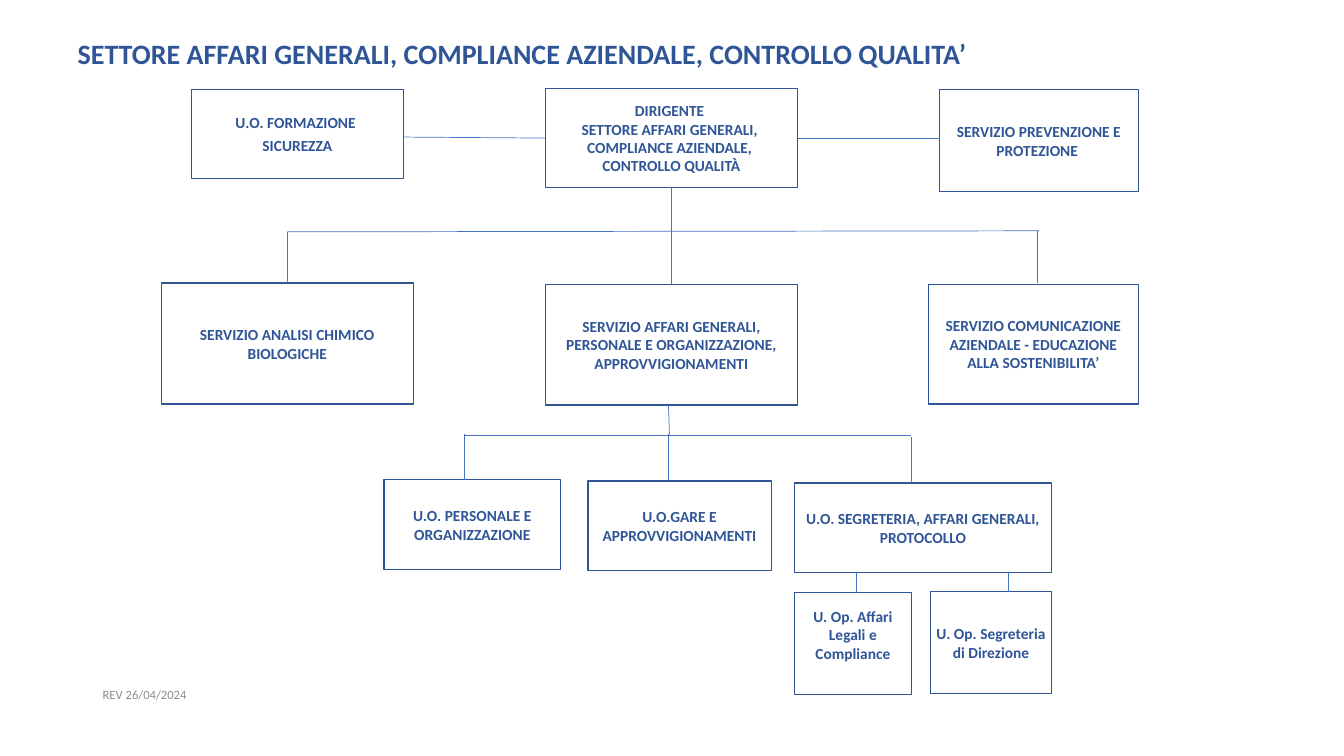
from lxml.etree import SubElement
from pptx import Presentation
from pptx.dml.color import RGBColor
from pptx.enum.shapes import MSO_CONNECTOR as Connector, MSO_SHAPE as Preset
from pptx.enum.text import MSO_ANCHOR as Anchor, PP_ALIGN as Align
from pptx.oxml.ns import qn
from pptx.util import Inches, Pt

COLORS = {"navy": "2F5597", "blue": "4472C4", "gray": "8C8C8C", "white": "FFFFFF"}
TOP, LEFT, BOTTOM = 0, 1, 2
LABEL = {"name": "Calibri", "size": Pt(11), "bold": True}
TITLE = {"name": "Calibri", "size": Pt(20), "bold": True}
REVISION = {"name": "Calibri", "size": Pt(9), "bold": False}
MARGINS = ("margin_left", "margin_top", "margin_right", "margin_bottom")

UNITS = {
    "dirigente": (5.41, 0.88, 2.5, 0.98, [
        "DIRIGENTE \vSETTORE AFFARI GENERALI, \vCOMPLIANCE AZIENDALE, \vCONTROLLO QUALITÀ"]),
    "formazione": (1.9, 0.89, 2.1, 0.88, ["U.O. FORMAZIONE ", "SICUREZZA"]),
    "prevenzione": (9.32, 0.89, 1.97, 1.01, ["SERVIZIO PREVENZIONE E PROTEZIONE "]),
    "analisi": (1.6, 2.81, 2.5, 1.2, ["SERVIZIO ANALISI CHIMICO BIOLOGICHE"]),
    "affari": (5.41, 2.82, 2.5, 1.2, [
        "SERVIZIO AFFARI GENERALI, PERSONALE E ORGANIZZAZIONE, APPROVVIGIONAMENTI"]),
    "comunicazione": (9.21, 2.82, 2.08, 1.19, [
        "SERVIZIO COMUNICAZIONE AZIENDALE - EDUCAZIONE ALLA SOSTENIBILITA’"]),
    "personale": (3.81, 4.76, 1.75, 0.89, ["U.O. PERSONALE E ORGANIZZAZIONE"]),
    "gare": (5.83, 4.77, 1.82, 0.89, ["U.O.GARE E APPROVVIGIONAMENTI"]),
    "segreteria": (7.88, 4.79, 2.55, 0.89, ["U.O. SEGRETERIA, AFFARI GENERALI, PROTOCOLLO"]),
    "legali": (7.88, 5.88, 1.16, 1.01, ["U. Op. Affari Legali e Compliance"]),
    "direzione": (9.23, 5.87, 1.2, 1.01, ["U. Op. Segreteria di Direzione"]),
}

LINKS = [
    (4.01, 1.36, 5.41, 1.37, None, ("dirigente", LEFT)),
    (7.91, 1.37, 9.32, 1.37, None, None),
    (6.66, 1.86, 6.66, 2.82, ("dirigente", BOTTOM), ("affari", TOP)),
    (2.85, 2.3, 10.31, 2.29, None, None),
    (2.85, 2.3, 2.85, 2.81, None, ("analisi", TOP)),
    (10.29, 2.29, 10.29, 2.81, None, None),
    (6.63, 4.02, 6.64, 4.31, None, None),
    (4.61, 4.32, 9.04, 4.32, None, None),
    (4.61, 4.31, 4.61, 4.76, None, None),
    (6.63, 4.31, 6.63, 4.76, None, None),
    (9.04, 4.34, 9.04, 4.79, None, None),
    (8.49, 5.67, 8.49, 5.88, None, None),
    (10, 5.67, 10, 5.87, None, None),
]


def rgb(name):
    return RGBColor.from_string(COLORS[name])


def write(frame, paragraphs, font, color, margins, align=Align.LEFT, after=0):
    frame.word_wrap = True
    frame.vertical_anchor = Anchor.MIDDLE
    for side, margin in zip(MARGINS, margins):
        setattr(frame, side, Inches(margin))
    frame.text = "\n".join(paragraphs)
    for para in frame.paragraphs:
        para.alignment = align
        para.space_after = Pt(after)
        for span in para.runs:
            for key, value in font.items():
                setattr(span.font, key, value)
            span.font.color.rgb = rgb(color)


def add_text(page, left, top, width, height, text, font, color, margins):
    box = page.shapes.add_textbox(*map(Inches, (left, top, width, height)))
    write(box.text_frame, [text], font, color, margins)


def add_unit(page, left, top, width, height, paragraphs):
    box = page.shapes.add_shape(Preset.RECTANGLE, *map(Inches, (left, top, width, height)))
    box.shadow.inherit = False
    box.fill.solid()
    box.fill.fore_color.rgb = rgb("white")
    box.line.color.rgb = rgb("navy")
    box.line.width = Pt(1)
    write(box.text_frame, paragraphs, LABEL, "navy", [0.05] * 4, Align.CENTER, 3)
    return box


def add_link(page, units, x1, y1, x2, y2, start, end):
    link = page.shapes.add_connector(Connector.STRAIGHT, *map(Inches, (x1, y1, x2, y2)))
    link.line.color.rgb = rgb("blue")
    link.line.width = Pt(0.5)
    SubElement(link._element.spPr, qn("a:effectLst"))
    if start:
        link.begin_connect(units[start[0]], start[1])
    if end:
        link.end_connect(units[end[0]], end[1])


def main():
    deck = Presentation()
    deck.slide_width, deck.slide_height = Inches(13.33), Inches(7.5)
    page = deck.slides.add_slide(deck.slide_layouts[6])
    add_text(page, 0.68, 0.28, 11.91, 0.5,
             "SETTORE AFFARI GENERALI, COMPLIANCE AZIENDALE, CONTROLLO QUALITA’",
             TITLE, "navy", (0.09, 0, 0, 0))
    units = {name: add_unit(page, *unit) for name, unit in UNITS.items()}
    units["legali"].text_frame.margin_bottom = Inches(0.23)
    for link in LINKS:
        add_link(page, units, *link)
    add_text(page, 0.92, 6.56, 4.77, 0.65, "REV 26/04/2024",
             REVISION, "gray", (0.1, 0.05, 0.1, 0.05))
    deck.save("out.pptx")


if __name__ == "__main__":
    main()
